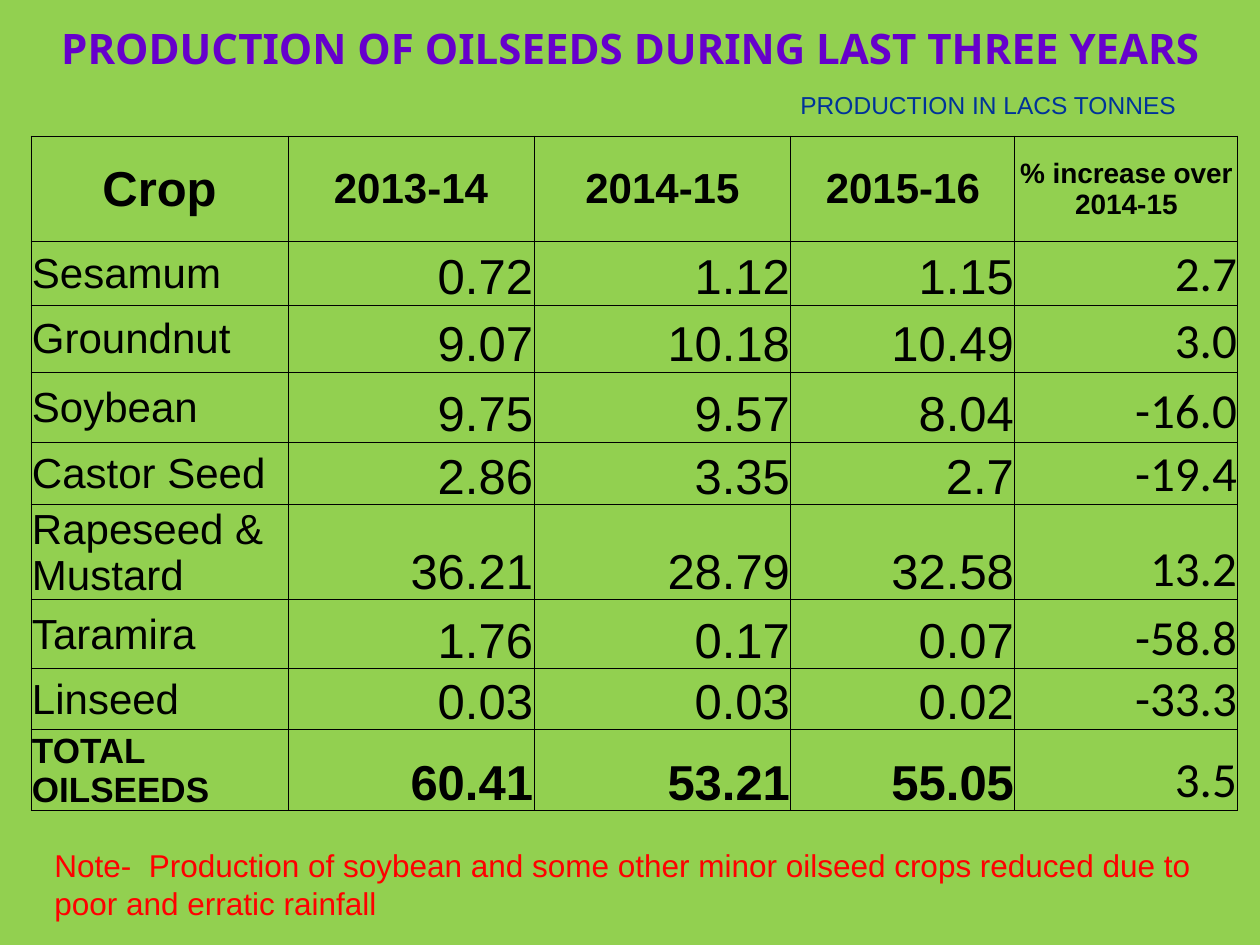
from lxml import etree
from pptx import Presentation
from pptx import util as u
from pptx.dml.color import RGBColor
from pptx.enum import text
from pptx.oxml.ns import qn

PX = 914400 // 126
BG, BLACK = "92D050", "000000"
TITLE = "PRODUCTION OF OILSEEDS DURING LAST THREE YEARS"
NOTES = [
    ("PRODUCTION IN LACS TONNES", (788, 84, 441, 43), 14, "003399"),
    ("Note-  Production of soybean and some other minor oilseed crops reduced due to poor and erratic rainfall",
     (42, 840, 1176, 165), 18, "FF0000"),
]
ROWS = [
    ("Crop", "2013-14", "2014-15", "2015-16", "% increase over 2014-15"),
    ("Sesamum", "0.72", "1.12", "1.15", "2.7"),
    ("Groundnut", "9.07", "10.18", "10.49", "3.0"),
    ("Soybean", "9.75", "9.57", "8.04", "-16.0"),
    ("Castor Seed", "2.86", "3.35", "2.7", "-19.4"),
    ("Rapeseed & Mustard", "36.21", "28.79", "32.58", "13.2"),
    ("Taramira", "1.76", "0.17", "0.07", "-58.8"),
    ("Linseed", "0.03", "0.03", "0.02", "-33.3"),
    ("TOTAL OILSEEDS", "60.41", "53.21", "55.05", "3.5"),
]
HEAD_SIZES = (28, 24, 24, 24, 16)
COL_W = (257, 246, 257, 224, 223)
ROW_H = (105, 64, 67, 70, 63, 95, 69, 61, 81)
TABLE_LEFT, TABLE_TOP = 31, 136
ALIGN, ANCHOR = text.PP_ALIGN, text.MSO_ANCHOR


def rgb(color):
    return RGBColor.from_string(color)


def write(tf, value, size, color=BLACK, font="Arial", bold=False, align=ALIGN.LEFT):
    tf.text = value
    p = tf.paragraphs[0]
    p.alignment = align
    f = p.runs[0].font
    f.size, f.name, f.bold = u.Pt(size), font, bold
    f.color.rgb = rgb(color)


def add_borders(cell):
    tc_pr = cell._tc.get_or_add_tcPr()
    for i, side in enumerate(("lnL", "lnR", "lnT", "lnB")):
        ln = etree.Element(qn("a:" + side), w=str(u.Pt(0.5)))
        fill = etree.SubElement(ln, qn("a:solidFill"))
        etree.SubElement(fill, qn("a:srgbClr"), val=BLACK)
        tc_pr.insert(i, ln)


def cell_style(row, col):
    total = row == len(ROWS) - 1
    if row == 0:
        return dict(size=HEAD_SIZES[col], bold=True, align=ALIGN.CENTER)
    if col == 0:
        return dict(size=20 if total else 24, bold=total)
    last = col == len(COL_W) - 1
    return dict(size=28, font="Calibri" if last else "Arial",
                bold=total and not last, align=ALIGN.RIGHT)


prs = Presentation()
prs.slide_width, prs.slide_height = u.Inches(10), u.Inches(7.5)
s = prs.slides.add_slide(prs.slide_layouts[5])
s.background.fill.solid()
s.background.fill.fore_color.rgb = rgb(BG)

title = s.shapes.title
title.left, title.top, title.width, title.height = 0, 0, 1260 * PX, 95 * PX
write(title.text_frame, TITLE, 24, "6600CC", "Noto Sans", True, ALIGN.CENTER)
title.text_frame.vertical_anchor = ANCHOR.MIDDLE

frame = s.shapes.add_table(len(ROWS), len(COL_W), TABLE_LEFT * PX, TABLE_TOP * PX,
                           sum(COL_W) * PX, sum(ROW_H) * PX)
table = frame.table
table.first_row = table.horz_banding = False
for column, w in zip(table.columns, COL_W):
    column.width = w * PX
for r, values in enumerate(ROWS):
    table.rows[r].height = ROW_H[r] * PX
    for c, value in enumerate(values):
        cell = table.cell(r, c)
        write(cell.text_frame, value, **cell_style(r, c))
        cell.margin_left = cell.margin_right = cell.margin_top = PX
        cell.margin_bottom = 0
        cell.vertical_anchor = ANCHOR.MIDDLE if r == 0 or c == 0 else ANCHOR.BOTTOM
        cell.fill.background()
        add_borders(cell)

for value, box, size, color in NOTES:
    tf = s.shapes.add_textbox(*(n * PX for n in box)).text_frame
    tf.word_wrap = True
    write(tf, value, size, color)

prs.save("out.pptx")
